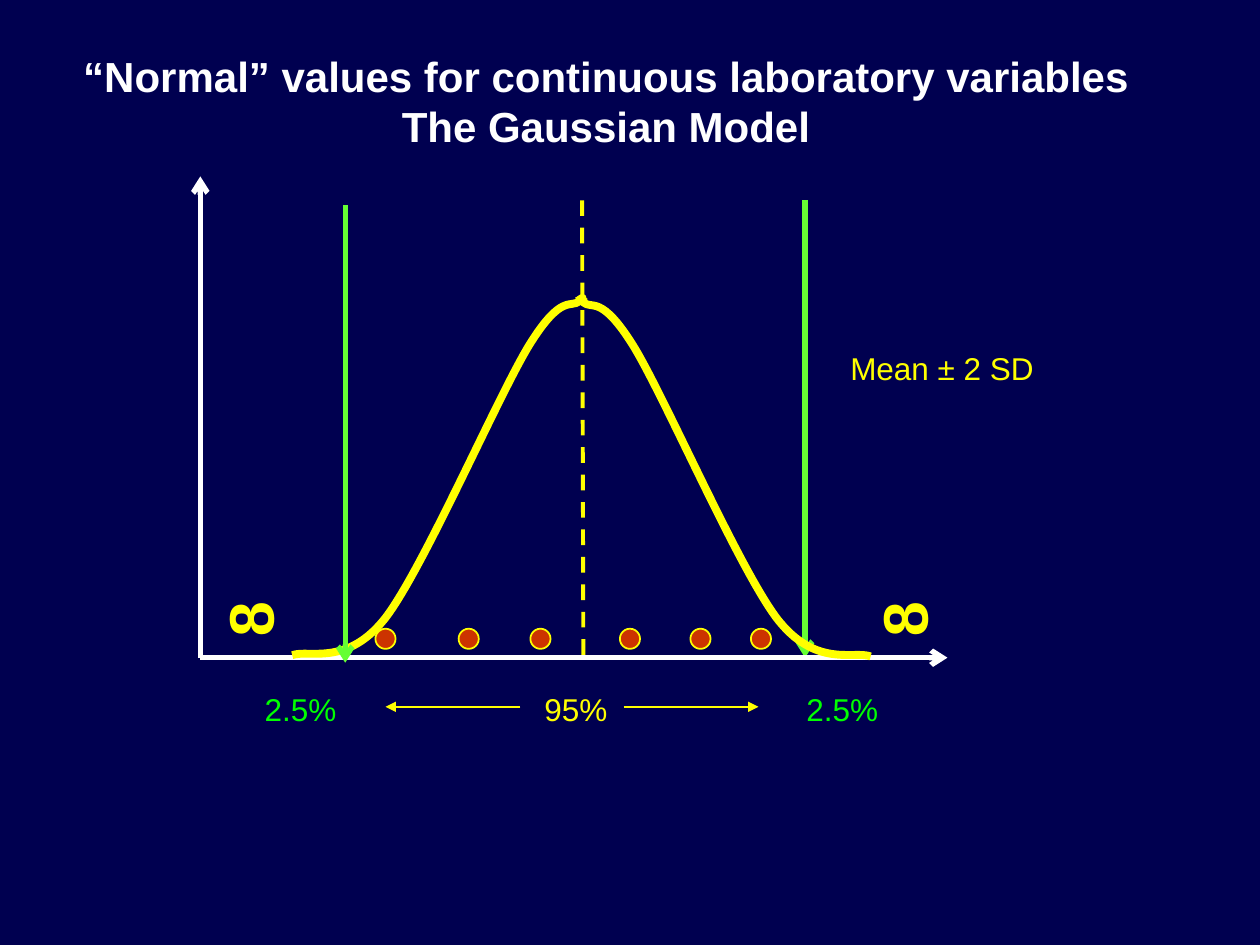
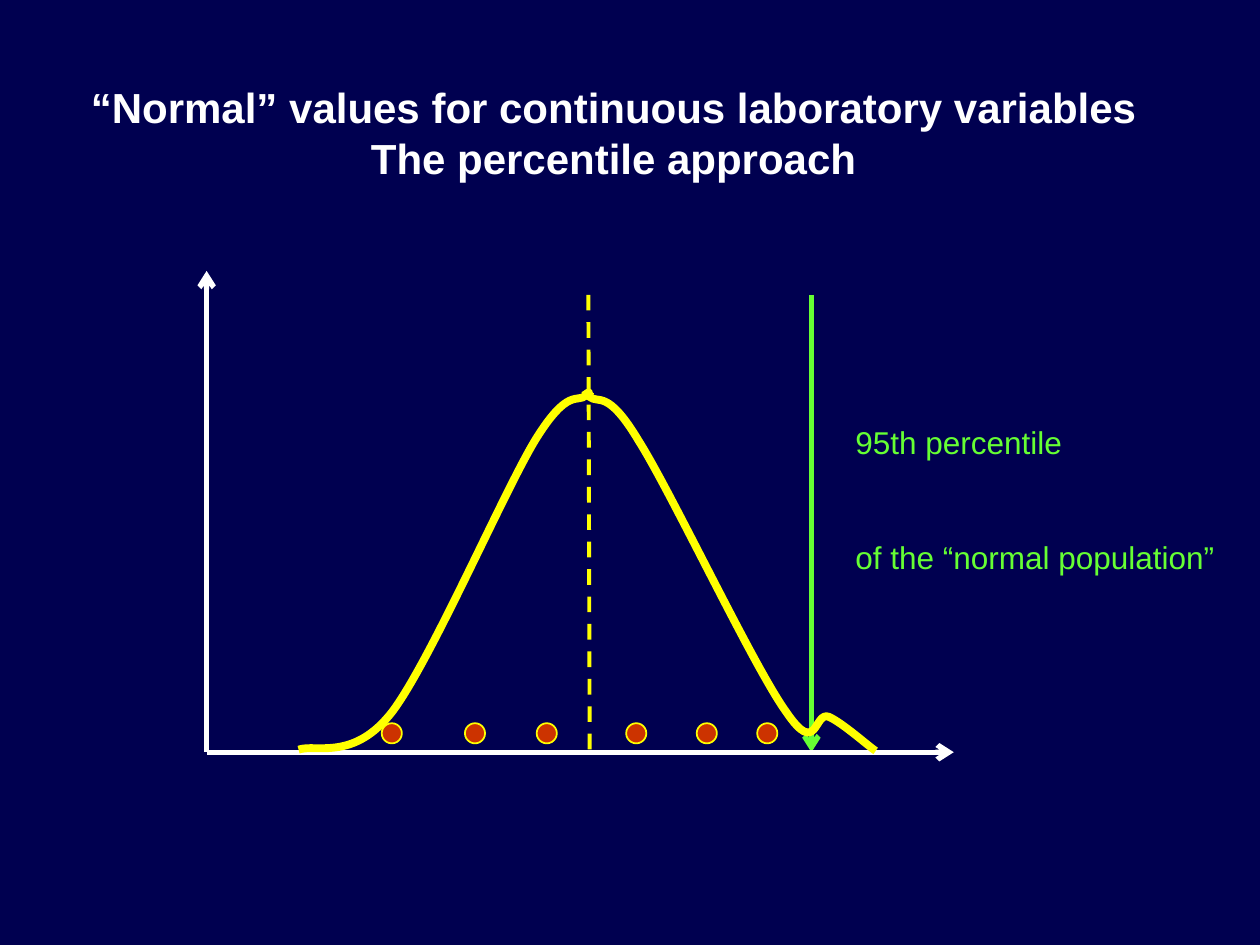
from lxml.etree import SubElement
from pptx import Presentation
from pptx.dml.color import RGBColor
from pptx.enum.dml import MSO_LINE
from pptx.enum.shapes import MSO_CONNECTOR, MSO_SHAPE
from pptx.enum.text import MSO_ANCHOR, MSO_AUTO_SIZE, PP_ALIGN
from pptx.oxml.ns import qn
from pptx.util import Inches, Pt

COLORS = {
    "night": "000050",
    "white": "FFFFFF",
    "yellow": "FFFF00",
    "limit": "66FF33",
    "tail": "00FF00",
    "subject": "CC3300",
}
COLUMNS, ROWS = 10, 7.5
DOT = 0.16
SUBJECTS = (1.39, 2.05, 2.62, 3.33, 3.89, 4.37)
RISE = [
    (0.73, -0.02),
    (0.86, -0.07), (1.17, 0.08), (1.48, -0.33),
    (1.79, -0.75), (2.36, -2.07), (2.61, -2.48),
    (2.87, -2.90), (2.94, -2.77), (3.01, -2.83),
    (3.07, -2.89), (3.00, -2.83), (2.99, -2.83),
]
FALL = [(6.05 - x, y + 0.01) for x, y in RISE]
BUMPED_FALL = [
    (5.31, -0.01),
    (5.25, -0.05), (5.05, -0.23), (4.94, -0.28),
    (4.82, -0.33), (4.85, 0.05), (4.60, -0.32),
    (4.34, -0.68), (3.69, -2.06), (3.43, -2.47),
] + FALL[7:]


def rgb(name):
    return RGBColor.from_string(COLORS[name])


class Deck:
    def __init__(self):
        self.presentation = Presentation()
        self.presentation.slide_width = Inches(10)
        self.presentation.slide_height = Inches(7.5)
        backdrop = self.presentation.slide_master.background.fill
        backdrop.solid()
        backdrop.fore_color.rgb = rgb("night")
        self.slide = None
        self.origin = (0, 0)

    def grid(self, column, row):
        return (
            round(self.presentation.slide_width * column / COLUMNS),
            round(self.presentation.slide_height * row / ROWS),
        )

    def plot(self, x, y):
        return self.origin[0] + x, self.origin[1] + y

    def place(self, item, box):
        item.left, item.top = self.grid(*box[:2])
        item.width, item.height = self.grid(*box[2:])

    def fill_text(self, frame, lines, size, color, bold=False, align=PP_ALIGN.CENTER,
                  anchor=MSO_ANCHOR.MIDDLE, wrap=False, grow=True, gap=0):
        frame.word_wrap = wrap
        frame.auto_size = MSO_AUTO_SIZE.SHAPE_TO_FIT_TEXT if grow else MSO_AUTO_SIZE.NONE
        frame.vertical_anchor = anchor
        for index, line in enumerate(lines):
            paragraph = frame.add_paragraph() if index else frame.paragraphs[0]
            paragraph.alignment = align
            paragraph.space_before = Pt(gap if index else 0)
            run = paragraph.add_run()
            run.text = line
            run.font.name = "Arial"
            run.font.size = Pt(size)
            run.font.bold = bold
            run.font.color.rgb = rgb(color)

    def start(self, subtitle, title_corner, origin):
        layout = self.presentation.slide_layouts[5]
        self.slide = self.presentation.slides.add_slide(layout)
        self.origin = origin
        title = self.slide.shapes.title
        self.place(title, (*title_corner, 8.5, 0.9))
        heading = "“Normal” values for continuous laboratory variables"
        self.fill_text(title.text_frame, [heading, subtitle], 24, "white", bold=True)

    def label(self, box, lines, color, size=18, turn=0, **style):
        note = self.slide.shapes.add_textbox(0, 0, 0, 0)
        self.fill_text(note.text_frame, lines, size, color, **style)
        self.place(note, box)
        note.rotation = turn

    def line(self, start, end, color, width, head=None, dashed=False):
        stroke = self.slide.shapes.add_connector(
            MSO_CONNECTOR.STRAIGHT, *self.grid(*start), *self.grid(*end))
        stroke.line.color.rgb = rgb(color)
        stroke.line.width = Pt(width)
        if dashed:
            stroke.line.dash_style = MSO_LINE.DASH
        properties = stroke.element.spPr
        if head:
            SubElement(properties.find(qn("a:ln")), qn("a:tailEnd"), type=head)
        SubElement(properties, qn("a:effectLst"))

    def outline(self, item, width):
        item.shadow.inherit = False
        item.line.color.rgb = rgb("yellow")
        item.line.width = Pt(width)

    def curve(self, points):
        start, *controls = [self.grid(*self.plot(*point)) for point in points]
        builder = self.slide.shapes.build_freeform(*start)
        builder.add_line_segments(controls, close=False)
        bell = builder.convert_to_shape()
        bell.fill.background()
        self.outline(bell, 4.5)
        trace = next(bell.element.iter(qn("a:path")))
        segments = trace.findall(qn("a:lnTo"))
        for first in range(0, len(segments), 3):
            bend = SubElement(trace, qn("a:cubicBezTo"))
            for segment in segments[first:first + 3]:
                bend.append(segment[0])
                trace.remove(segment)

    def dot(self, x):
        subject = self.slide.shapes.add_shape(MSO_SHAPE.OVAL, 0, 0, 0, 0)
        self.place(subject, (*self.plot(x, -0.23), DOT, DOT))
        subject.fill.solid()
        subject.fill.fore_color.rgb = rgb("subject")
        self.outline(subject, 1)

    def limit(self, x, top, bottom):
        self.line(self.plot(x, top), self.plot(x, bottom), "limit", 3, "arrow")

    def distribution(self, fall):
        self.limit(4.8, -3.63, 0)
        for x in SUBJECTS:
            self.dot(x)
        for tip in ((0, -3.82), (5.93, 0)):
            self.line(self.origin, self.plot(*tip), "white", 3, "arrow")
        self.line(self.plot(3.03, -3.63), self.plot(3.04, 0), "yellow", 2.25, dashed=True)
        self.curve(RISE)
        self.curve(fall)


def gaussian_slide(deck):
    deck.start("The Gaussian Model", (0.56, 0.35), (1.59, 5.22))
    deck.distribution(FALL)
    deck.limit(1.15, -3.59, 0.04)
    deck.label((6.65, 2.72, 1.66, 0.7), ["Mean ± 2 SD"], "yellow",
               align=PP_ALIGN.LEFT, anchor=MSO_ANCHOR.TOP, grow=False)
    for left in (2, 6.3):
        deck.label((left, 5.43, 0.77, 0.4), ["2.5%"], "tail")
    deck.label((4.22, 5.43, 0.7, 0.4), ["95%"], "yellow")
    for inner, outer in ((4.13, 3.06), (4.95, 6.02)):
        deck.line((inner, 5.61), (outer, 5.61), "yellow", 1, "triangle")
    for left in (1.81, 7):
        deck.label((left, 4.64, 0.33, 0.7), ["8"], "yellow", size=36,
                   turn=268.9, bold=True, wrap=True)


def percentile_slide(deck):
    deck.start("The percentile approach", (0.62, 0.6), (1.64, 5.97))
    deck.distribution(BUMPED_FALL)
    deck.label((6.69, 3.02, 3.12, 1.6),
               ["95th percentile", "of the “normal population”"], "limit",
               align=PP_ALIGN.LEFT, anchor=MSO_ANCHOR.BOTTOM, grow=False, gap=44)


def main():
    deck = Deck()
    gaussian_slide(deck)
    percentile_slide(deck)
    deck.presentation.save("out.pptx")


if __name__ == "__main__":
    main()
